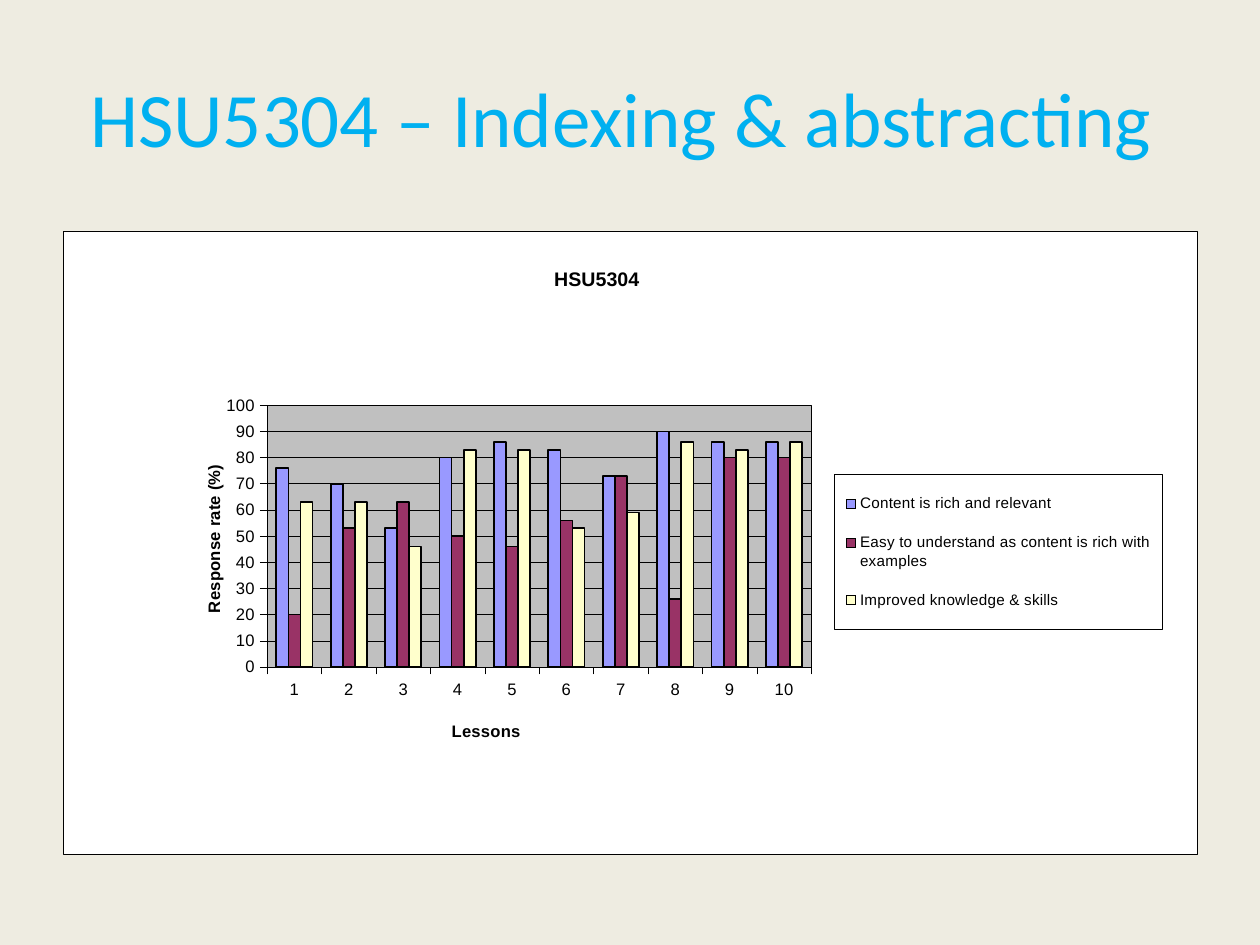
from lxml import etree
from pptx import Presentation
from pptx import util as u
from pptx.chart.data import CategoryChartData
from pptx.dml.color import RGBColor
from pptx.enum import chart as ch, text
from pptx.oxml import parse_xml
from pptx.oxml.ns import nsdecls, qn

# Content
HEADING = "HSU5304 – Indexing & abstracting "
LESSONS = [str(n) for n in range(1, 11)]
SERIES = [
    ("Content is rich and relevant", "9999FF",
     (76, 70, 53, 80, 86, 83, 73, 90, 86, 86)),
    ("Easy to understand as content is rich with examples", "993366",
     (20, 53, 63, 50, 46, 56, 73, 26, 80, 80)),
    ("Improved knowledge & skills", "FFFFCC",
     (63, 63, 46, 83, 83, 53, 59, 86, 83, 86)),
]
# Shares of the chart's size: left, top and, where needed, width, height
PLOT = (0.18, 0.28, 0.48, 0.42)
LEGEND = (0.68, 0.39, 0.29, 0.25)
TITLE, X_TITLE, Y_TITLE = (0.43, 0.05), (0.34, 0.78), (0.12, 0.37)
BLACK = "000000"


def rgb(color):
    return RGBColor.from_string(color)


def set_font(font, size, color=BLACK, name="Arial", bold=False):
    font.size, font.name, font.bold = u.Pt(size), name, bold
    font.color.rgb = rgb(color)


def set_line(line, width):
    line.color.rgb, line.width = rgb(BLACK), u.Pt(width)


def layout(el, box, inner=False):
    """Place a chart part by shares of the chart's size."""
    for old in el.findall(qn("c:layout")):
        el.remove(old)
    target = '<c:layoutTarget val="inner"/>' if inner else ""
    modes = '<c:xMode val="edge"/><c:yMode val="edge"/>'
    sizes = "".join(f'<c:{k} val="{v}"/>' for k, v in zip("xywh", box))
    new = parse_xml(f'<c:layout {nsdecls("c")}><c:manualLayout>'
                    f'{target}{modes}{sizes}</c:manualLayout></c:layout>')
    overlay = el.find(qn("c:overlay"))
    if overlay is None:
        el.insert(0, new)
    else:
        overlay.addprevious(new)


def box_format(fill):
    """Fill with a thin black border, for parts that have no format object."""
    return parse_xml(
        f'<c:spPr {nsdecls("c", "a")}><a:solidFill><a:srgbClr val="{fill}"/>'
        f'</a:solidFill><a:ln w="{u.Pt(0.25)}"><a:solidFill>'
        f'<a:srgbClr val="{BLACK}"/></a:solidFill></a:ln></c:spPr>')


def add_title(owner, title, wording, size, place):
    tf = title.text_frame
    tf.text = wording
    set_font(tf.paragraphs[0].runs[0].font, size, bold=True)
    el = title._element
    if el.find(qn("c:overlay")) is None:
        etree.SubElement(el, qn("c:overlay")).set("val", "0")
    layout(el, place)


prs = Presentation()
prs.slide_width, prs.slide_height = u.Inches(10), u.Inches(7.5)
slide = prs.slides.add_slide(prs.slide_layouts[6])
slide.background.fill.solid()
slide.background.fill.fore_color.rgb = rgb("EEECE1")

# Heading
W, H = prs.slide_width, prs.slide_height
left, width = int(W * 0.05), int(W * 0.9)
tf = slide.shapes.add_textbox(left, int(H * 0.04), width, u.Inches(1.25)).text_frame
tf.word_wrap = True
tf.vertical_anchor = text.MSO_ANCHOR.MIDDLE
p = tf.paragraphs[0]
p.alignment = text.PP_ALIGN.CENTER
r = p.add_run()
r.text = HEADING
set_font(r.font, 44, "00B0F0", "Calibri")

# Chart
data = CategoryChartData()
data.categories = LESSONS
for name, _, values in SERIES:
    data.add_series(name, values)
chart = slide.shapes.add_chart(ch.XL_CHART_TYPE.COLUMN_CLUSTERED, left,
                               u.Inches(1.83), width, u.Inches(4.95), data).chart
set_font(chart.font, 9.5)
add_title(chart, chart.chart_title, "HSU5304", 11.2, TITLE)

# Columns
plot = chart.plots[0]
plot.gap_width, plot.overlap, plot.vary_by_categories = 150, 0, False
for s, (_, color, _) in zip(plot.series, SERIES):
    s.format.fill.solid()
    s.format.fill.fore_color.rgb = rgb(color)
    set_line(s.format.line, 1)

# Axes
for axis, wording, place in ((chart.category_axis, "Lessons", X_TITLE),
                             (chart.value_axis, "Response rate (%)", Y_TITLE)):
    add_title(axis, axis.axis_title, wording, 9.5, place)
    axis.major_tick_mark = ch.XL_TICK_MARK.OUTSIDE
    set_font(axis.tick_labels.font, 9.5)
    set_line(axis.format.line, 0.25)
y_axis = chart.value_axis
y_axis.minimum_scale, y_axis.maximum_scale, y_axis.major_unit = 0, 100, 10
set_line(y_axis.major_gridlines.format.line, 0.25)
y_body = y_axis.axis_title.text_frame._txBody.find(qn("a:bodyPr"))
y_body.set("rot", "-5400000")
y_body.set("vert", "horz")

# Legend
chart.has_legend = True
legend = chart.legend
legend.position = ch.XL_LEGEND_POSITION.RIGHT
legend.include_in_layout = False
set_font(legend.font, 8.7)
layout(legend._element, LEGEND)
legend._element.find(qn("c:overlay")).addnext(box_format("FFFFFF"))

# Plot area and chart frame
space = chart._chartSpace
area = space.chart.plotArea
layout(area, PLOT, inner=True)
area.append(box_format("C0C0C0"))
space.chart.addnext(box_format("FFFFFF"))

prs.save("out.pptx")
